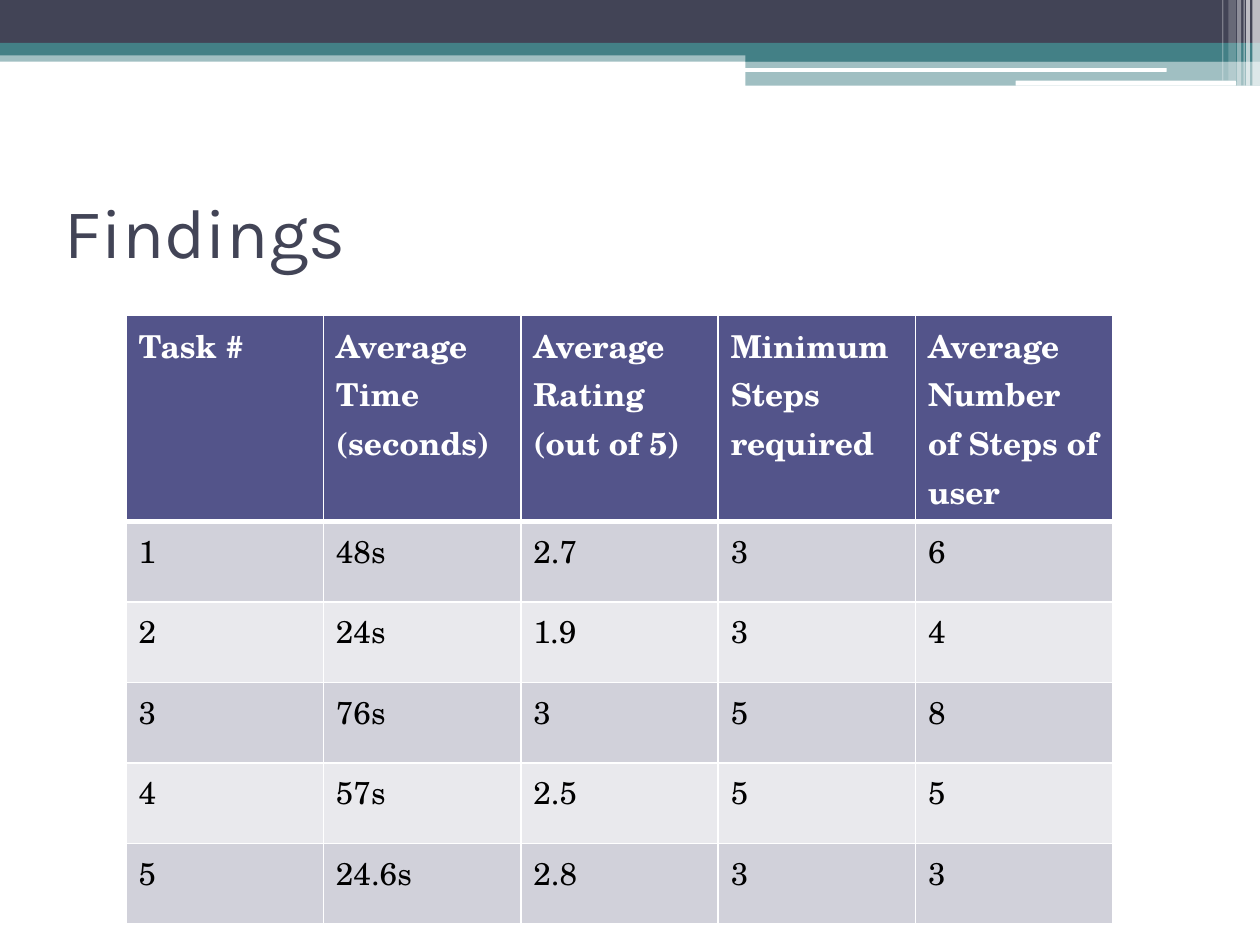
from pptx import Presentation
from pptx.dml.color import RGBColor as RGB
from pptx.enum.shapes import MSO_SHAPE as Shape
from pptx.enum.text import MSO_ANCHOR as Anchor
from pptx.oxml.ns import qn
from pptx.util import Pt
from lxml.etree import SubElement as Sub

HUES = {
    "dark": "424456", "teal": "438086", "white": "FFFFFF", "black": "000000",
    "head": "53548A", "odd": "D1D1DA", "even": "E9E9ED",
}
FONTS = {"title": "Karla", "body": "TeX Gyre Schola"}
BARS = [
    (0, 28.8, 720, 6.5, "teal", 50),
    (0, 0, 720, 24.5, "dark", 100),
    (0, 24.5, 720, 7.2, "teal", 100),
    (426, 28.1, 294, 7.2, "teal", 100),
    (426, 34.6, 294, 14.4, "teal", 50),
]
PILLS = [(425.5, 38.9, 241.2, 2.2), (580.3, 46.1, 126, 2.9)]
STRIPES = [
    (715.7, 4.3, 49, 65), (712.1, 2.2, 49, 65), (710.6, 0.7, 49, 60),
    (707, 2.2, 49, 40), (702, 4.3, 46.1, 20), (698.4, 0.7, 46.1, 30),
]
ROWS = [
    ["Task #", "Average Time (seconds)", "Average Rating (out of 5)",
     "Minimum Steps required", "Average Number of Steps of user"],
    ["1", "48s", "2.7", "3", "6"],
    ["2", "24s", "1.9", "3", "4"],
    ["3", "76s", "3", "5", "8"],
    ["4", "57s", "2.5", "5", "5"],
    ["5", "24.6s", "2.8", "3", "3"],
]


def hue(name):
    """Return the colour of the given name."""
    return RGB.from_string(HUES[name])


def block(slide, box, color, alpha=100, kind=Shape.RECTANGLE):
    """Draw one plain filled shape without a line."""
    shape = slide.shapes.add_shape(kind, *map(Pt, box))
    shape.shadow.inherit = False
    shape.line.fill.background()
    shape.fill.solid()
    shape.fill.fore_color.rgb = hue(color)
    if alpha < 100:
        tone = shape.fill._xPr.find(qn("a:solidFill"))[0]
        Sub(tone, qn("a:alpha"), val=str(alpha * 1000))


def banner(slide, left, top):
    """Draw the bars, pills and stripes along the top edge."""
    for x, y, wide, high, color, alpha in BARS:
        block(slide, (left + x, top + y, wide, high), color, alpha)
    for x, y, wide, high in PILLS:
        block(slide, (left + x, top + y, wide, high), "white",
              kind=Shape.ROUNDED_RECTANGLE)
    for x, wide, high, alpha in STRIPES:
        block(slide, (left + x, top, wide, high), "white", alpha)


def write(frame, text, font, size, color, bold=False):
    """Add one styled run to the first paragraph."""
    run = frame.paragraphs[0].add_run()
    run.text = text
    run.font.name = FONTS[font]
    run.font.size = Pt(size)
    run.font.bold = bold
    run.font.color.rgb = hue(color)


def title(slide, box, text):
    """Place the slide title."""
    frame = slide.shapes.add_textbox(*map(Pt, box)).text_frame
    frame.word_wrap = True
    frame.vertical_anchor = Anchor.MIDDLE
    write(frame, text, "title", 40, "dark")


def edge(cell, side, width):
    """Give one side of a cell a white border."""
    line = Sub(cell._tc.get_or_add_tcPr(), qn(f"a:ln{side}"),
               w=str(Pt(width)))
    fill = Sub(line, qn("a:solidFill"))
    Sub(fill, qn("a:srgbClr"), val=HUES["white"])


def grid(slide, box, rows, first):
    """Place the table, with a header row of the given height."""
    wide, high = box[2:]
    count = len(rows[0])
    table = slide.shapes.add_table(len(rows), count, *map(Pt, box)).table
    for col in table.columns:
        col.width = Pt(wide / count)
    for i, row in enumerate(rows):
        head = i == 0
        table.rows[i].height = Pt(first if head
                                  else (high - first) / (len(rows) - 1))
        for j, text in enumerate(row):
            cell = table.cell(i, j)
            for side in "LRTB":
                thick = (head and side == "B") or (i == 1 and side == "T")
                edge(cell, side, 3 if thick else 1)
            cell.fill.solid()
            cell.fill.fore_color.rgb = hue(
                "head" if head else "odd" if i % 2 else "even")
            write(cell.text_frame, text, "body", 18,
                  "white" if head else "black", head)


def main():
    """Build and save the findings slide."""
    deck = Presentation()
    deck.slide_width, deck.slide_height = Pt(720), Pt(540)
    slide = deck.slides.add_slide(deck.slide_layouts[6])
    banner(slide, 0, 0)
    title(slide, (30, 90, 660, 84), "Findings")
    grid(slide, (72, 180, 564, 348), ROWS, 118)
    deck.save("out.pptx")


if __name__ == "__main__":
    main()
